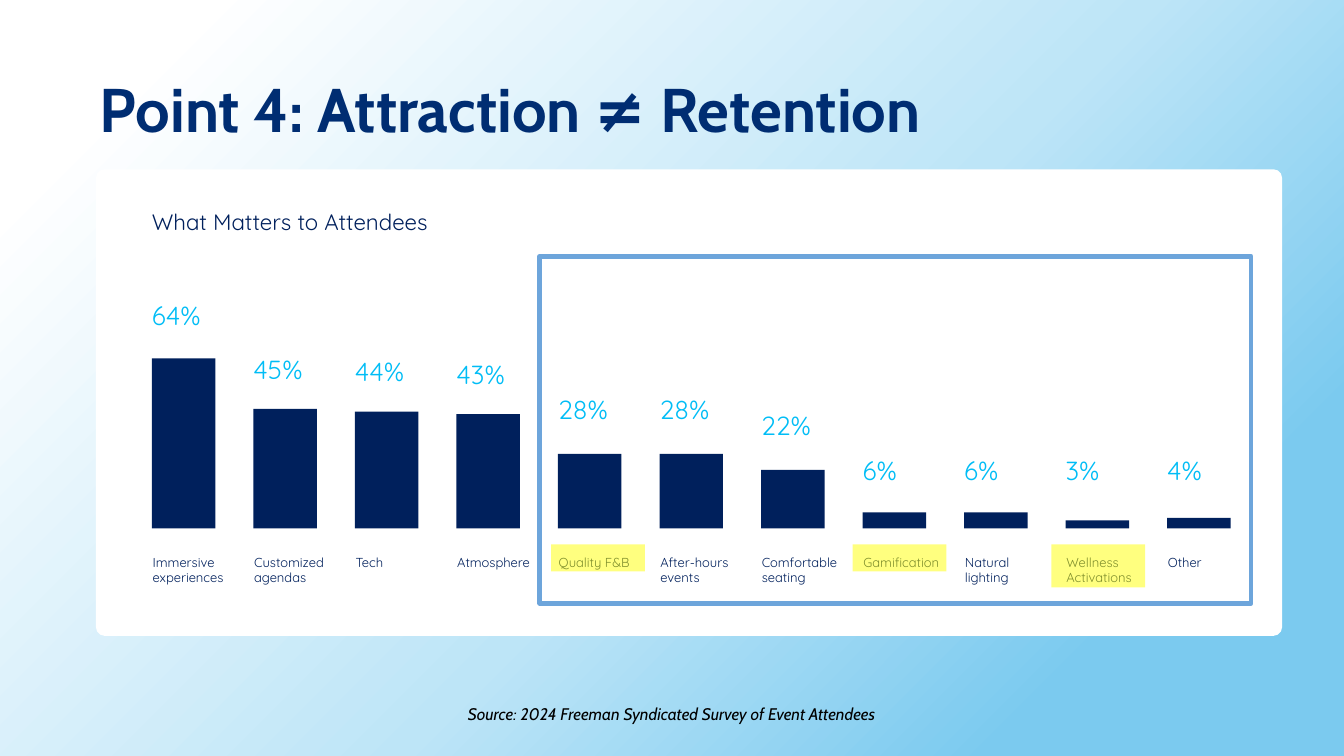
from dataclasses import dataclass
from typing import NamedTuple, Optional

from lxml.etree import SubElement
from pptx import Presentation
from pptx.dml.color import RGBColor
from pptx.enum.shapes import MSO_SHAPE
from pptx.enum.text import MSO_ANCHOR, PP_ALIGN
from pptx.oxml import parse_xml
from pptx.oxml.ns import nsdecls, qn
from pptx.util import Inches, Pt


@dataclass(frozen=True)
class Theme:
    title: str = "002D72"
    navy: str = "00205C"
    cyan: str = "00BDF6"
    card: str = "FFFFFF"
    frame: str = "6DA5DB"
    highlight: str = "FFFF00"
    source: str = "000000"
    gradient: tuple = ((17, "7BCAEF", 50), (45, "BDE5F7", 50), (90, "FFFFFF", 100))
    heading_font: str = "Cabin"
    body_font: str = "Quicksand"
    title_size: float = 58.7
    subtitle_size: float = 21.3
    value_size: float = 24.9
    label_size: float = 12.4
    source_size: float = 16


class Area(NamedTuple):
    left: float
    top: float
    width: float
    height: float

    def lengths(self) -> list:
        return [Inches(value) for value in self]


class Bar(NamedTuple):
    label: str
    percent: int
    value_top: float


THEME = Theme()

BARS = [
    Bar("Immersive experiences", 64, 3.96),
    Bar("Customized agendas", 45, 4.67),
    Bar("Tech", 44, 4.7),
    Bar("Atmosphere", 43, 4.74),
    Bar("Quality F&B", 28, 5.21),
    Bar("After-hours events", 28, 5.21),
    Bar("Comfortable seating", 22, 5.42),
    Bar("Gamification", 6, 6.01),
    Bar("Natural lighting", 6, 6.01),
    Bar("Wellness Activations", 3, 6.01),
    Bar("Other", 4, 6.01),
]
FIRST_LEFT, BAR_STEP, BAR_WIDTH = 2.01, 1.343, 0.84
BASELINE = 6.99
TALLEST = 2.25

HIGHLIGHTS = [
    Area(7.29, 7.2, 1.24, 0.36),
    Area(11.28, 7.2, 1.24, 0.36),
    Area(13.91, 7.2, 1.24, 0.57),
]


def paint_background(page) -> None:
    """Fill the page with a gradient that spreads from the bottom right corner."""
    page.background.fill.gradient()
    old = page.element.find(".//" + qn("a:gradFill"))
    stops = "".join(
        f'<a:gs pos="{place * 1000}"><a:srgbClr val="{color}">'
        f'<a:alpha val="{alpha * 1000}"/></a:srgbClr></a:gs>'
        for place, color, alpha in THEME.gradient
    )
    new = parse_xml(
        f'<a:gradFill {nsdecls("a")} rotWithShape="1"><a:gsLst>{stops}</a:gsLst>'
        '<a:path path="circle"><a:fillToRect l="100000" t="100000"/></a:path></a:gradFill>'
    )
    old.getparent().replace(old, new)


def add_block(page, area: Area, *, fill: Optional[str] = None, line: Optional[str] = None,
              line_width: float = 1, alpha: int = 100, corner: Optional[float] = None):
    kind = MSO_SHAPE.RECTANGLE if corner is None else MSO_SHAPE.ROUNDED_RECTANGLE
    shape = page.shapes.add_shape(kind, *area.lengths())
    shape.shadow.inherit = False
    if corner is not None:
        shape.adjustments[0] = corner
    if fill:
        shape.fill.solid()
        shape.fill.fore_color.rgb = RGBColor.from_string(fill)
        if alpha < 100:
            color = shape.element.spPr.find(qn("a:solidFill"))[0]
            SubElement(color, qn("a:alpha")).set("val", str(alpha * 1000))
    else:
        shape.fill.background()
    if line:
        shape.line.color.rgb = RGBColor.from_string(line)
        shape.line.width = Pt(line_width)
    else:
        shape.line.fill.background()
    return shape


def add_text(page, area: Area, text: str, *, size: float, color: str,
             font: str = THEME.body_font, bold: bool = False, italic: bool = False,
             align=PP_ALIGN.LEFT, anchor=MSO_ANCHOR.TOP, inset: bool = False,
             wrap: bool = True, line_spacing: float = 1.0, space_after: float = 0):
    box = page.shapes.add_textbox(*area.lengths())
    frame = box.text_frame
    frame.word_wrap = wrap
    frame.vertical_anchor = anchor
    if not inset:
        frame.margin_left = frame.margin_top = frame.margin_right = frame.margin_bottom = 0
    para = frame.paragraphs[0]
    para.alignment = align
    para.line_spacing = line_spacing
    para.space_after = Pt(space_after)
    span = para.add_run()
    span.text = text
    span.font.name = font
    span.font.size = Pt(size)
    span.font.bold = bold
    span.font.italic = italic
    span.font.color.rgb = RGBColor.from_string(color)
    return box


def add_bar(page, index: int, bar: Bar) -> None:
    left = FIRST_LEFT + index * BAR_STEP
    height = TALLEST * bar.percent / BARS[0].percent
    add_block(page, Area(left, BASELINE - height, BAR_WIDTH, height), fill=THEME.navy)
    add_text(page, Area(left, bar.value_top, 0.98, 0.42), f"{bar.percent}%",
             size=THEME.value_size, color=THEME.cyan)
    add_text(page, Area(left + 0.01, 7.33, 1.13, 0.83), bar.label,
             size=THEME.label_size, color=THEME.navy, space_after=2.7)


def main() -> None:
    deck = Presentation()
    deck.slide_width, deck.slide_height = Inches(17.78), Inches(10)
    page = deck.slides.add_slide(deck.slide_layouts[6])
    paint_background(page)

    # Title
    add_text(page, Area(1.22, 0.53, 15.33, 1.93), "Point 4: Attraction ≠ Retention",
             size=THEME.title_size, color=THEME.title, font=THEME.heading_font, bold=True,
             anchor=MSO_ANCHOR.MIDDLE, inset=True, line_spacing=0.9)

    # Card with the bars
    add_block(page, Area(1.27, 2.24, 15.69, 6.17), fill=THEME.card, corner=0.018)
    add_text(page, Area(2.01, 2.76, 9.6, 0.36), "What Matters to Attendees",
             size=THEME.subtitle_size, color=THEME.navy)
    for index, bar in enumerate(BARS):
        add_bar(page, index, bar)

    # Frame and highlights over the retention factors
    add_block(page, Area(7.14, 3.39, 9.41, 4.59), line=THEME.frame, line_width=4.5)
    for area in HIGHLIGHTS:
        add_block(page, area, fill=THEME.highlight, alpha=50)

    # Source line
    add_text(page, Area(5.89, 9.26, 5.99, 0.37),
             "Source: 2024 Freeman Syndicated Survey of Event Attendees",
             size=THEME.source_size, color=THEME.source, font=THEME.heading_font,
             italic=True, align=PP_ALIGN.CENTER, inset=True, wrap=False)

    deck.save("out.pptx")


if __name__ == "__main__":
    main()
